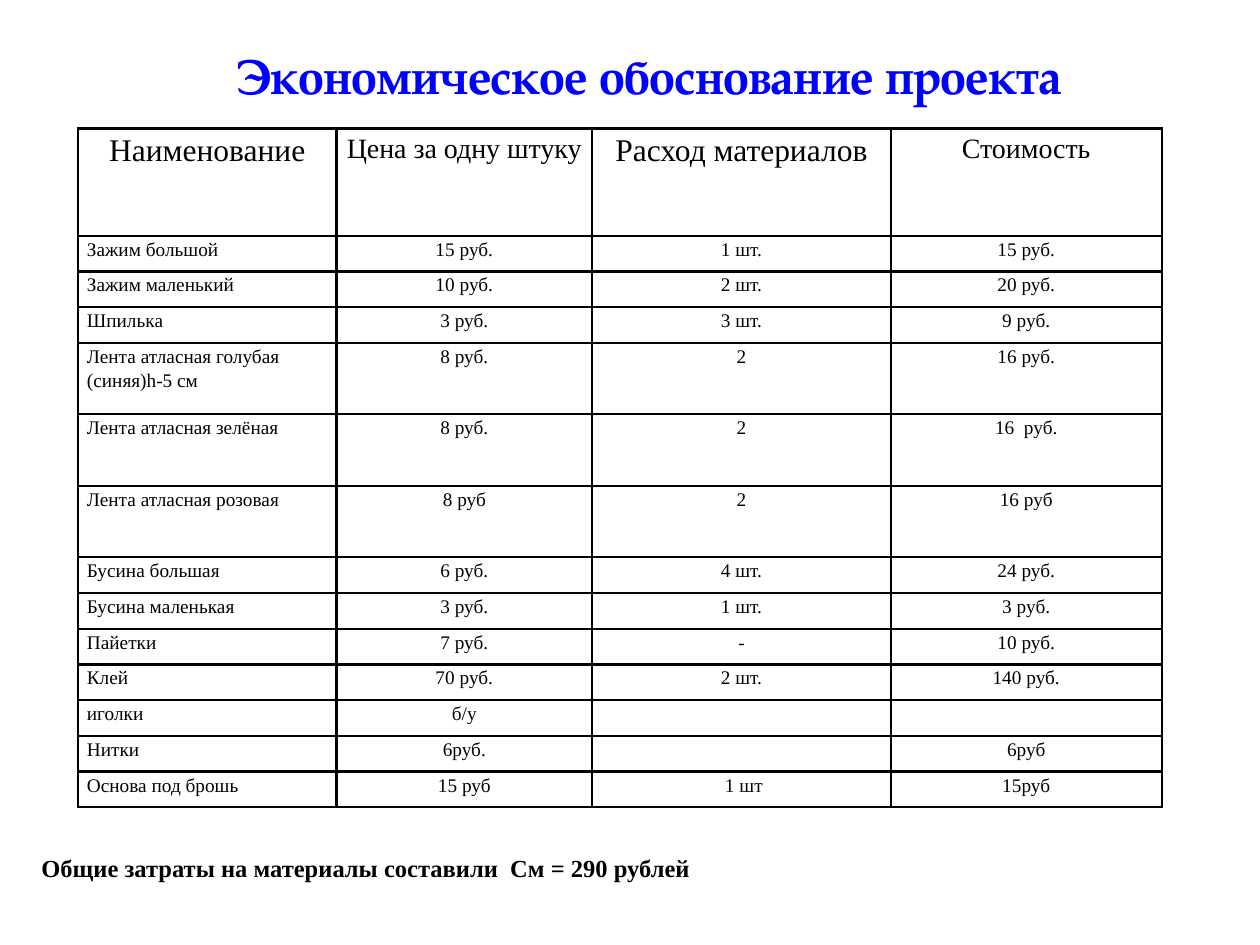
from typing import NamedTuple

from lxml.etree import SubElement
from pptx import Presentation
from pptx.dml.color import RGBColor
from pptx.enum.text import MSO_ANCHOR, PP_ALIGN
from pptx.oxml.ns import qn
from pptx.util import Inches, Pt

HUES = {"ink": "000000", "title": "0000FF", "paper": "FFFFFF"}
COLS, ROWS = 100, 75  # slide grid
WIDE, HIGH = Inches(10), Inches(7.5)
SERIF = "Times New Roman"


class Label(NamedTuple):
    text: str
    box: tuple[float, float, float, float]  # grid columns and rows
    font: dict
    hue: str
    frame: dict
    align: PP_ALIGN


class Line(NamedTuple):
    cells: tuple[str, str, str, str]
    span: int = 1  # height in table row units


LABELS = [
    Label("Экономическое обоснование проекта", (10.9, 3.1, 81.2, 5.7),
          {"name": "TeX Gyre Pagella", "size": Pt(28), "bold": True}, "title",
          {"word_wrap": True}, PP_ALIGN.CENTER),
    Label("Общие затраты на материалы составили  См = 290 рублей",
          (2.3, 67.2, 53.9, 3.4),
          {"name": SERIF, "size": Pt(14), "bold": True}, "ink",
          {"word_wrap": False, "vertical_anchor": MSO_ANCHOR.MIDDLE},
          PP_ALIGN.LEFT),
]

LINES = [
    Line(("Наименование", "Цена за одну штуку", "Расход материалов", "Стоимость"), 3),
    Line(("Зажим большой", "15 руб.", "1 шт.", "15 руб.")),
    Line(("Зажим маленький", "10 руб.", "2 шт.", "20 руб.")),
    Line(("Шпилька", "3 руб.", "3 шт.", "9 руб.")),
    Line(("Лента атласная голубая (синяя)h-5 см", "8 руб.", "2", "16 руб."), 2),
    Line(("Лента атласная зелёная", "8 руб.", "2", "16  руб."), 2),
    Line(("Лента атласная розовая", "8 руб", "2", "16 руб"), 2),
    Line(("Бусина большая", "6 руб.", "4 шт.", "24 руб.")),
    Line(("Бусина маленькая", "3 руб.", "1 шт.", "3 руб.")),
    Line(("Пайетки", "7 руб.", "-", "10 руб.")),
    Line(("Клей", "70 руб.", "2 шт.", "140 руб.")),
    Line(("иголки", "б/у", "", "")),
    Line(("Нитки", "6руб.", "", "6руб")),
    Line(("Основа под брошь", "15 руб", " 1 шт", "15руб")),
]
SPANS = [20.5, 20.3, 23.7, 21.5]  # column widths in grid columns
HEADS = [18, 16, 18, 16]  # heading sizes
BODY = 11
CELL = {"margin_left": Inches(0.07), "margin_right": Inches(0.07),
        "margin_top": 0, "margin_bottom": 0}


def across(n: float) -> int:
    return round(WIDE * n / COLS)


def down(n: float) -> int:
    return round(HIGH * n / ROWS)


def apply(item, values: dict) -> None:
    for name, value in values.items():
        setattr(item, name, value)


def write(para, text: str, font: dict, hue: str) -> None:
    run = para.add_run()
    run.text = text
    apply(run.font, font)
    run.font.color.rgb = RGBColor.from_string(HUES[hue])


def add_label(slide, label: Label) -> None:
    x, y, w, h = label.box
    frame = slide.shapes.add_textbox(across(x), down(y), across(w), down(h)).text_frame
    apply(frame, label.frame)
    para = frame.paragraphs[0]
    para.alignment = label.align
    write(para, label.text, label.font, label.hue)


def add_rules(cell) -> None:
    props = cell._tc.get_or_add_tcPr()
    for place, side in enumerate(("lnL", "lnR", "lnT", "lnB")):
        rule = props.makeelement(qn(f"a:{side}"), {"w": str(Pt(1.5))})
        fill = SubElement(rule, qn("a:solidFill"))
        SubElement(fill, qn("a:srgbClr"), val=HUES["ink"])
        props.insert(place, rule)


def fill_cell(cell, text: str, size: int, align: PP_ALIGN) -> None:
    apply(cell, CELL)
    cell.fill.solid()
    cell.fill.fore_color.rgb = RGBColor.from_string(HUES["paper"])
    add_rules(cell)
    para = cell.text_frame.paragraphs[0]
    apply(para, {"alignment": align, "line_spacing": 1.15})
    if text:
        write(para, text, {"name": SERIF, "size": Pt(size), "bold": False}, "ink")
    else:  # keeps an empty row from growing
        SubElement(para._p, qn("a:endParaRPr"), sz=str(size * 100))


def add_costs(slide) -> None:
    unit = 53.9 / sum(line.span for line in LINES)
    table = slide.shapes.add_table(len(LINES), len(SPANS), across(6.2), down(10.2),
                                   across(sum(SPANS)), down(53.9)).table
    apply(table, {"first_row": False, "horz_banding": False})
    for col, span in zip(table.columns, SPANS):
        col.width = across(span)
    for r, line in enumerate(LINES):
        table.rows[r].height = down(unit * line.span)
        for c, text in enumerate(line.cells):
            size = BODY if r else HEADS[c]
            align = PP_ALIGN.LEFT if r and not c else PP_ALIGN.CENTER
            fill_cell(table.cell(r, c), text, size, align)


def main() -> None:
    deck = Presentation()
    apply(deck, {"slide_width": WIDE, "slide_height": HIGH})
    slide = deck.slides.add_slide(deck.slide_layouts[6])
    # Title, cost table, total
    title, total = LABELS
    add_label(slide, title)
    add_costs(slide)
    add_label(slide, total)
    deck.save("out.pptx")


if __name__ == "__main__":
    main()
